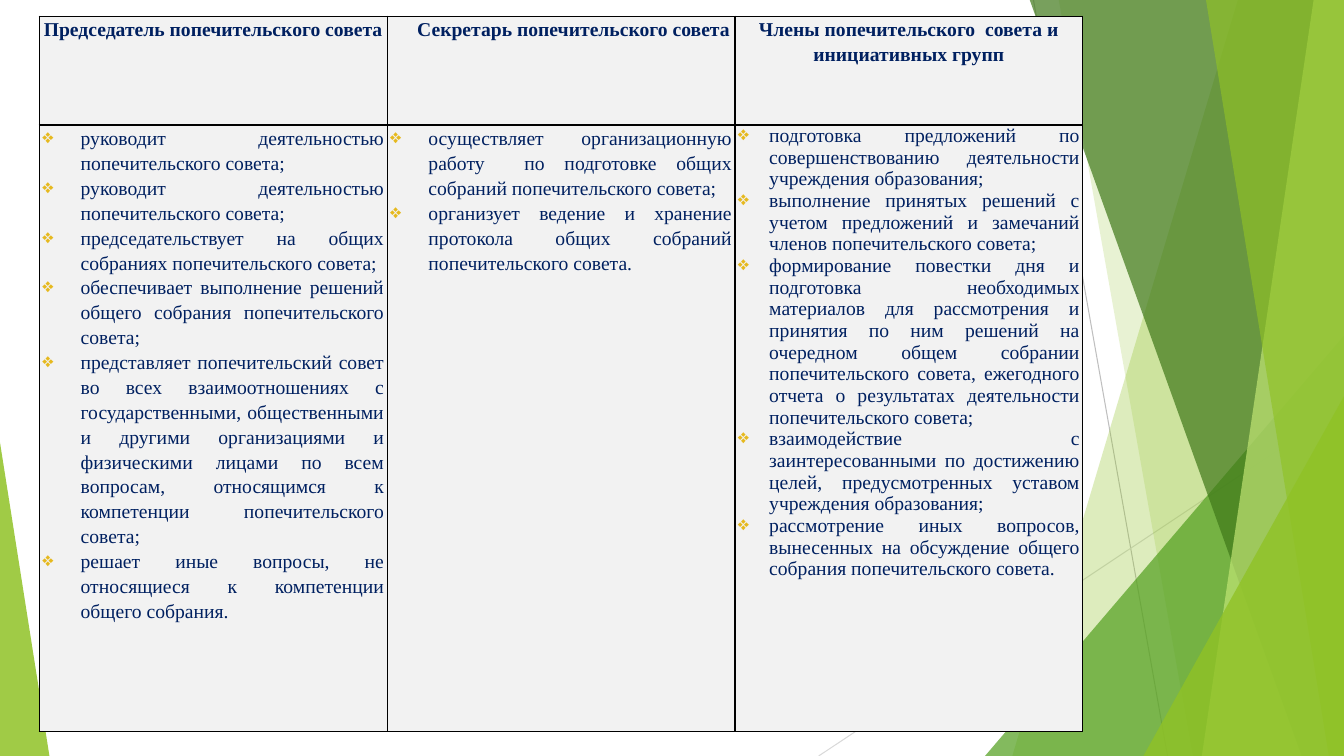
from lxml import etree
from pptx import Presentation
from pptx.dml.color import RGBColor
from pptx.enum.shapes import MSO_CONNECTOR, MSO_SHAPE
from pptx.enum.text import PP_ALIGN
from pptx.oxml.ns import qn
from pptx.util import Inches, Pt

LINE = MSO_CONNECTOR.STRAIGHT
TRIANGLE = MSO_SHAPE.ISOSCELES_TRIANGLE
CENTER, JUSTIFY = PP_ALIGN.CENTER, PP_ALIGN.JUSTIFY

WIDTH, HEIGHT, TOP = 13.33, 7.5, -0.01
COLORS = {
    "lime": "90C226", "green": "54A021", "forest": "3F7819", "pale": "C0E474",
    "gray": "BFBFBF", "silver": "D9D9D9", "cell": "F2F2F2",
    "navy": "002060", "gold": "E6B91E", "black": "000000",
}

# Heading, first-line shift, hanging indent, line spacing, duties
ROLES = [
    ("Председатель попечительского совета", 0, 0.38, 1.15, [
        "руководит деятельностью попечительского совета;",
        "руководит деятельностью попечительского совета;",
        "председательствует на общих собраниях попечительского совета;",
        "обеспечивает выполнение решений общего собрания попечительского совета;",
        "представляет попечительский совет во всех взаимоотношениях с "
        "государственными, общественными и другими организациями и физическими "
        "лицами по всем вопросам, относящимся к компетенции попечительского совета;",
        "решает иные вопросы, не относящиеся к компетенции общего собрания.",
    ]),
    ("Секретарь попечительского совета", 0.25, 0.38, 1.15, [
        "осуществляет организационную работу  по подготовке общих собраний "
        "попечительского совета;",
        "организует ведение и хранение протокола общих собраний "
        "попечительского совета.",
    ]),
    ("Члены попечительского  совета и инициативных групп", 0, 0.31, 1.0, [
        "подготовка предложений по совершенствованию деятельности учреждения "
        "образования;",
        "выполнение принятых решений с учетом предложений и замечаний членов "
        "попечительского совета;",
        "формирование повестки дня и подготовка необходимых материалов для "
        "рассмотрения и принятия по ним решений на очередном общем собрании "
        "попечительского совета, ежегодного отчета о результатах деятельности "
        "попечительского совета;",
        "взаимодействие с заинтересованными по достижению целей, "
        "предусмотренных уставом учреждения образования;",
        "рассмотрение иных вопросов, вынесенных на обсуждение общего собрания "
        "попечительского совета.",
    ]),
]


def rgb(name):
    return RGBColor.from_string(COLORS[name])


def add_tag(parent, tag, **attrs):
    node = etree.SubElement(parent, qn(tag))
    for key, value in attrs.items():
        node.set(key, str(value))
    return node


class Deck:
    font, size = "Times New Roman", Pt(14)

    def __init__(self):
        self.prs = Presentation()
        self.prs.slide_width = Inches(WIDTH)
        self.prs.slide_height = Inches(HEIGHT)
        self.slide = self.prs.slides.add_slide(self.prs.slide_layouts[6])
        self.shapes = self.slide.shapes

    def line(self, start, end, color):
        link = self.shapes.add_connector(LINE, *map(Inches, start + end))
        link.line.color.rgb = rgb(color)
        link.line.width = Pt(0.75)
        add_tag(link._element.spPr, "a:effectLst")

    def paint(self, shape, color, alpha):
        shape.shadow.inherit = False
        shape.line.fill.background()
        shape.fill.solid()
        shape.fill.fore_color.rgb = rgb(color)
        tint = shape._element.spPr.find(qn("a:solidFill"))[0]
        add_tag(tint, "a:alpha", val=alpha * 1000)

    def band(self, upper, lower, color, alpha):
        points = [(upper, TOP), (WIDTH, TOP), (WIDTH, HEIGHT), (lower, HEIGHT)]
        spots = [(Inches(x), Inches(y)) for x, y in points]
        form = self.shapes.build_freeform(*spots[0])
        form.add_line_segments(spots[1:], close=True)
        self.paint(form.convert_to_shape(), color, alpha)

    def wedge(self, box, tip, color, alpha):
        shape = self.shapes.add_shape(TRIANGLE, *map(Inches, box))
        shape.adjustments[0] = tip
        self.paint(shape, color, alpha)

    def table(self, box, rows, cols):
        frame = self.shapes.add_table(len(rows), cols, *map(Inches, box))
        grid = frame.table
        for row, height in zip(grid.rows, rows):
            row.height = Inches(height)
        for col in grid.columns:
            col.width = Inches(box[2] / cols)
        for cell in grid.iter_cells():
            self.cell(cell)
        return grid

    def cell(self, cell):
        cell.margin_left = cell.margin_right = Inches(0.03)
        cell.margin_top = cell.margin_bottom = 0
        props = cell._tc.get_or_add_tcPr()
        for side in "LRTB":
            edge = add_tag(props, f"a:ln{side}", w=Pt(1))
            fill = add_tag(edge, "a:solidFill")
            add_tag(fill, "a:srgbClr", val=COLORS["black"])
        cell.fill.solid()
        cell.fill.fore_color.rgb = rgb("cell")

    def text(self, para, words, align, spacing, bold=False):
        para.alignment = align
        para.line_spacing = spacing
        run = para.add_run()
        run.text = words
        run.font.name, run.font.size = self.font, self.size
        run.font.bold = bold
        run.font.color.rgb = rgb("navy")
        return para._p.get_or_add_pPr()

    def bullets(self, cell, items, indent, spacing):
        frame = cell.text_frame
        for i, item in enumerate(items):
            para = frame.add_paragraph() if i else frame.paragraphs[0]
            props = self.text(para, item, JUSTIFY, spacing)
            props.set("marL", str(Inches(indent)))
            props.set("indent", str(-Inches(indent)))
            tint = add_tag(props, "a:buClr")
            add_tag(tint, "a:srgbClr", val=COLORS["gold"])
            add_tag(props, "a:buChar", char="❖")


def main():
    deck = Deck()

    # Backdrop of thin lines and clear green facets
    deck.line((10.25, 0), (11.58, HEIGHT), "gray")
    deck.line((WIDTH, 4.03), (8.12, HEIGHT), "silver")
    deck.band(12.28, 10.04, "lime", 30)
    deck.band(10.5, 11.83, "lime", 20)
    deck.wedge((9.77, 3.33, 3.56, 4.17), 1, "green", 72)
    deck.band(10.21, 12.91, "forest", 70)
    deck.band(13.03, 11.92, "pale", 70)
    deck.band(11.96, 13.18, "lime", 65)
    deck.wedge((11.34, 3.93, 1.99, 3.57), 1, "lime", 80)
    deck.wedge((0, 4.39, 0.49, 3.11), 0, "lime", 85)

    # Table of roles and duties
    grid = deck.table((0.39, 0.16, 10.35, 7.1), (1.08, 6.02), len(ROLES))
    for col, (title, shift, indent, spacing, duties) in enumerate(ROLES):
        head = grid.cell(0, col).text_frame.paragraphs[0]
        props = deck.text(head, title, CENTER, 1.15, bold=True)
        props.set("indent", str(Inches(shift)))
        deck.bullets(grid.cell(1, col), duties, indent, spacing)

    deck.prs.save("out.pptx")


if __name__ == "__main__":
    main()
